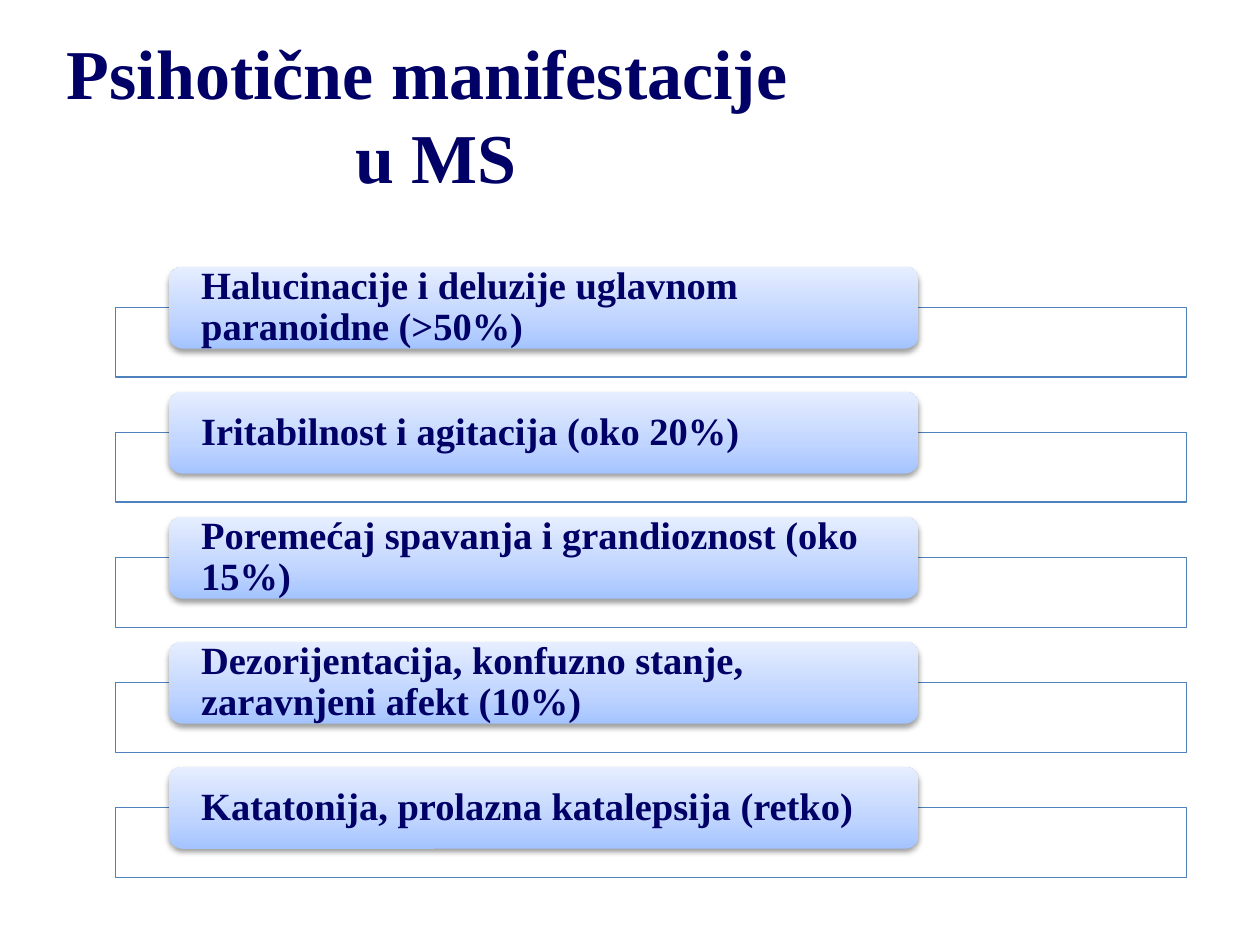
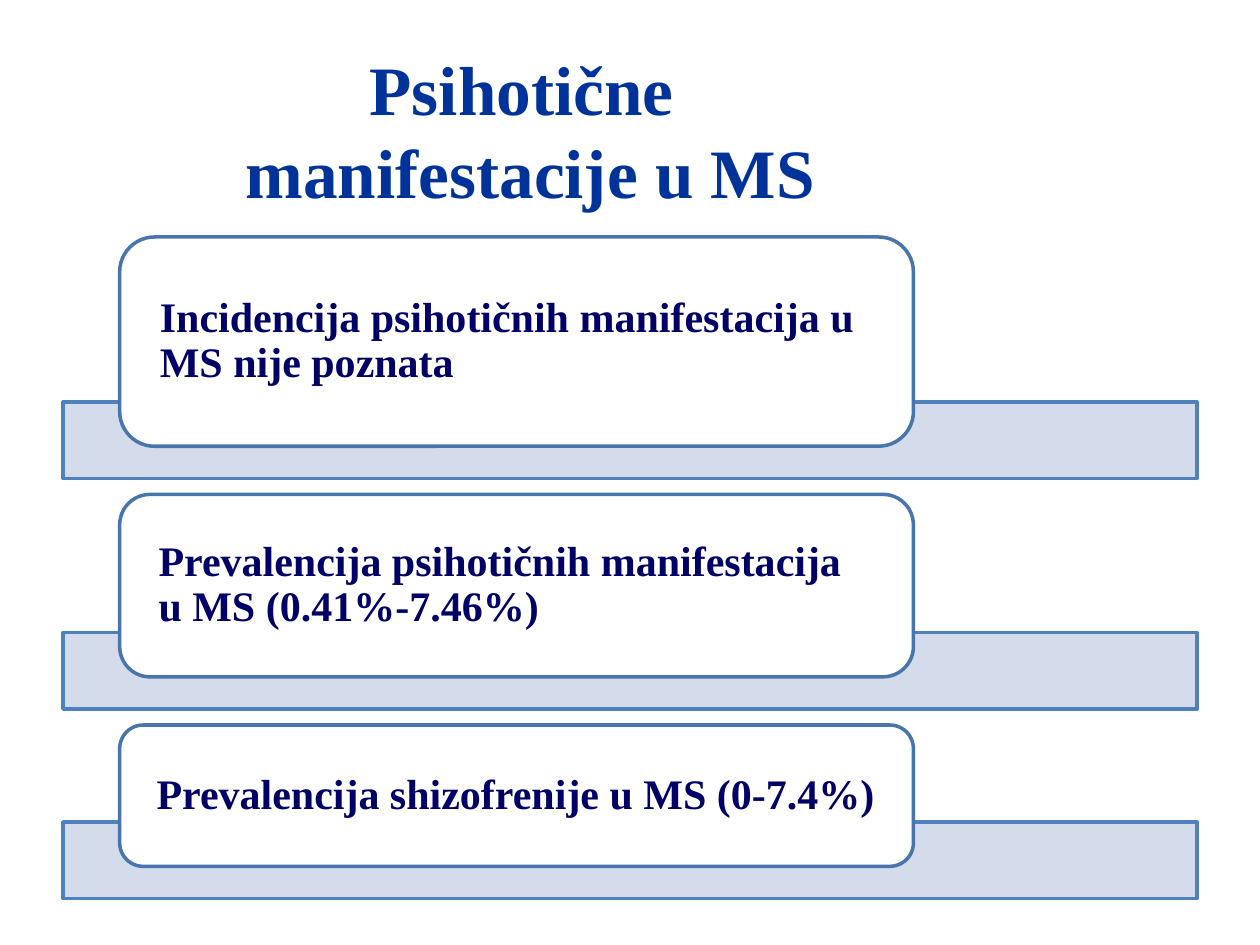
from dataclasses import dataclass
from typing import Optional

from lxml import etree
from pptx import Presentation
from pptx.dml.color import RGBColor
from pptx.enum.shapes import MSO_SHAPE
from pptx.enum.text import MSO_ANCHOR, PP_ALIGN
from pptx.oxml.ns import qn
from pptx.util import Pt

RECTANGLE, ROUNDED = MSO_SHAPE.RECTANGLE, MSO_SHAPE.ROUNDED_RECTANGLE
MIDDLE = MSO_ANCHOR.MIDDLE
LEFT, CENTER = PP_ALIGN.LEFT, PP_ALIGN.CENTER

FONT = "Times New Roman"
WHITE, NAVY, ROYAL = "FFFFFF", "000066", "003399"
BAR_EDGE, PILL_EDGE, BAR_TINT = "4F81BD", "4875AC", "D0D8E8"
PILL_GRADIENT = ((0, "A4C4FF"), (35, "BFD4FF"), (100, "E6EEFF"))
BAR_OPACITY = 90


@dataclass(frozen=True)
class Title:
    text: str
    left: float
    top: float
    width: float
    height: float
    size: float
    color: str


@dataclass(frozen=True)
class Finding:
    text: str
    height: float


@dataclass(frozen=True)
class ListStyle:
    """Pills stacked downwards, each overlapping the bar behind it."""
    top: float
    pill_left: float
    pill_width: float
    bar_left: float
    bar_width: float
    bar_height: float
    overlap: float
    gap: float
    inset: float
    text_size: float
    bar_fill: str
    line_width: float
    pill_edge: Optional[str]  # None gives a shaded, shadowed pill


SYMPTOM_HEIGHT = 46.8
SYMPTOMS_TITLE = Title("Psihotične manifestacije \vu MS", 0, 21.6, 498.2, 86.4, 40, NAVY)
SYMPTOMS_STYLE = ListStyle(152.4, 96.5, 428.4, 66, 612, 39.7, 23.4, 8.35, 16.2,
                           22, WHITE, 0.75, None)
SYMPTOMS = [Finding(text, SYMPTOM_HEIGHT) for text in (
    "Halucinacije i deluzije uglavnom paranoidne (>50%)",
    "Iritabilnost i agitacija (oko 20%)",
    "Poremećaj spavanja i grandioznost (oko 15%)",
    "Dezorijentacija, konfuzno stanje, zaravnjeni afekt (10%)",
    "Katatonija, prolazna katalepsija (retko)",
)]

RATES_TITLE = Title("Psihotične \vmanifestacije u MS", 36, 21.6, 534.2, 104.4, 39.6, ROYAL)
RATES_STYLE = ListStyle(135.4, 68.4, 453.6, 36, 648, 43.8, 25.4, 9.1, 17.15,
                        24, BAR_TINT, 2, PILL_EDGE)
RATES = [
    Finding("Incidencija psihotičnih manifestacija u MS nije poznata", 119.6),
    Finding("Prevalencija psihotičnih manifestacija u MS (0.41%-7.46%)", 104.3),
    Finding("Prevalencija shizofrenije u MS (0-7.4%)", 80.8),
]


def rgb(color: str) -> RGBColor:
    return RGBColor.from_string(color)


def set_all(target, values: dict) -> None:
    for key, value in values.items():
        setattr(target, key, value)


def add_color(parent, color: str, opacity: int = 100) -> None:
    node = etree.SubElement(parent, qn("a:srgbClr"), val=color)
    if opacity < 100:
        etree.SubElement(node, qn("a:alpha"), val=str(opacity * 1000))


def write(shape, text: str, size: float, color: str, align, frame_format: dict,
          spacing: Optional[float] = None) -> None:
    frame = shape.text_frame
    set_all(frame, {"word_wrap": True, "vertical_anchor": MIDDLE, **frame_format})
    frame.text = text
    paragraph = frame.paragraphs[0]
    set_all(paragraph, {"alignment": align, "line_spacing": spacing})
    for run in paragraph.runs:
        set_all(run.font, {"name": FONT, "size": Pt(size), "bold": True})
        run.font.color.rgb = rgb(color)


def add_box(slide, kind, left: float, top: float, width: float, height: float,
            fill: str, edge: Optional[str], line_width: float):
    box = slide.shapes.add_shape(kind, Pt(left), Pt(top), Pt(width), Pt(height))
    box.shadow.inherit = False
    box.fill.solid()
    box.fill.fore_color.rgb = rgb(fill)
    if edge:
        box.line.color.rgb = rgb(edge)
        box.line.width = Pt(line_width)
    else:
        box.line.fill.background()
    return box


def shade(pill) -> None:
    """Three-stop gradient, light at the top, and a soft shadow below."""
    pill.fill.gradient()
    pill.fill.gradient_angle = 90
    properties = pill._element.spPr
    stops = properties.find(".//" + qn("a:gsLst"))
    for stop in list(stops):
        stops.remove(stop)
    for position, color in PILL_GRADIENT:
        add_color(etree.SubElement(stops, qn("a:gs"), pos=str(position * 1000)), color)
    shadow = etree.SubElement(properties.find(qn("a:effectLst")), qn("a:outerShdw"),
                              blurRad=str(Pt(3.1)), dist=str(Pt(1.6)),
                              dir="5400000", rotWithShape="0")
    add_color(shadow, "000000", 38)


def add_title(slide, title: Title) -> None:
    box = slide.shapes.add_textbox(Pt(title.left), Pt(title.top),
                                   Pt(title.width), Pt(title.height))
    write(box, title.text, title.size, title.color, CENTER, {})


def add_findings(slide, findings: list[Finding], style: ListStyle) -> None:
    pill_top = style.top
    for finding in findings:
        # Bar behind the pill
        bar_top = pill_top + finding.height - style.overlap
        bar = add_box(slide, RECTANGLE, style.bar_left, bar_top, style.bar_width,
                      style.bar_height, style.bar_fill, BAR_EDGE, style.line_width)
        bar_color = bar._element.spPr.find(qn("a:solidFill")).find(qn("a:srgbClr"))
        etree.SubElement(bar_color, qn("a:alpha"), val=str(BAR_OPACITY * 1000))

        # Pill with the finding
        pill = add_box(slide, ROUNDED, style.pill_left, pill_top, style.pill_width,
                       finding.height, WHITE, style.pill_edge, style.line_width)
        if style.pill_edge is None:
            shade(pill)
        insets = {"margin_left": Pt(style.inset), "margin_right": Pt(style.inset),
                  "margin_top": 0, "margin_bottom": 0}
        write(pill, finding.text, style.text_size, NAVY, LEFT, insets, 0.9)
        pill_top = bar_top + style.bar_height + style.gap


def main() -> None:
    deck = Presentation()
    set_all(deck, {"slide_width": Pt(720), "slide_height": Pt(540)})
    blank = deck.slide_layouts[6]
    for title, findings, style in ((SYMPTOMS_TITLE, SYMPTOMS, SYMPTOMS_STYLE),
                                   (RATES_TITLE, RATES, RATES_STYLE)):
        slide = deck.slides.add_slide(blank)
        add_title(slide, title)
        add_findings(slide, findings, style)
    deck.save("out.pptx")


if __name__ == "__main__":
    main()
